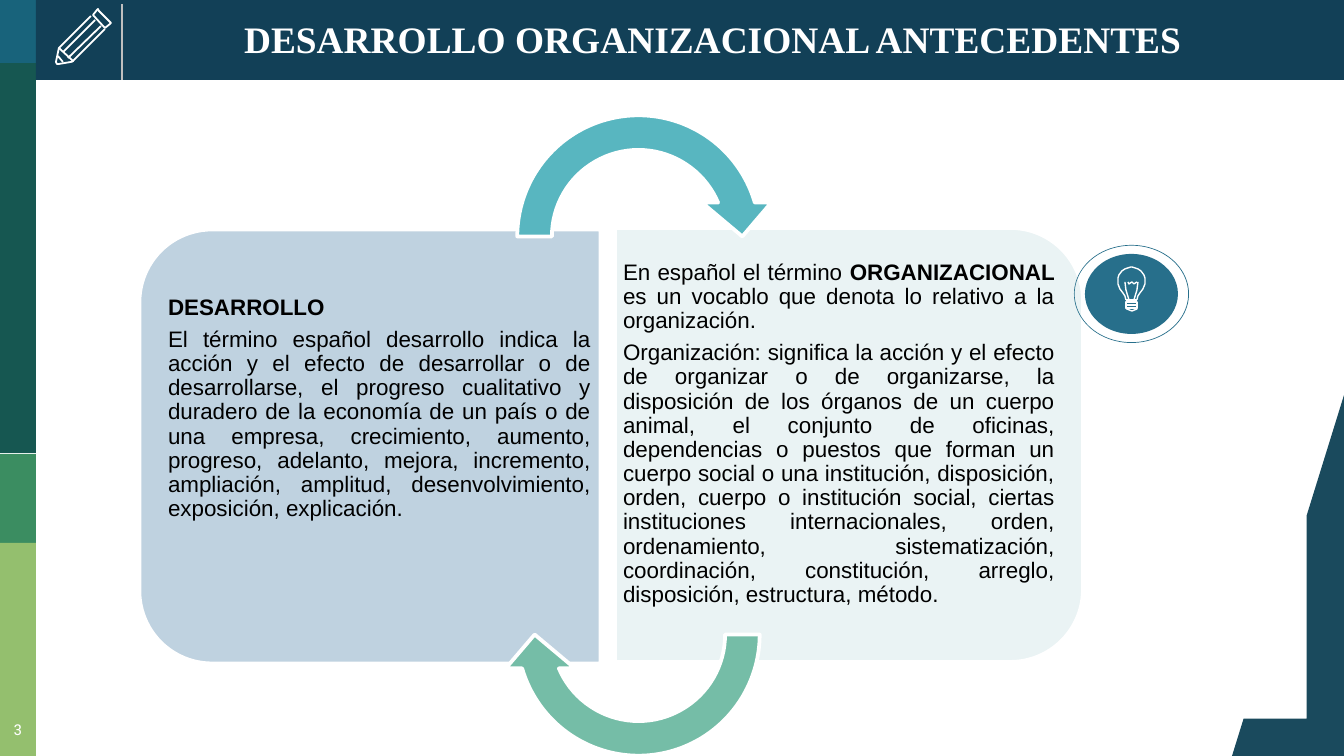
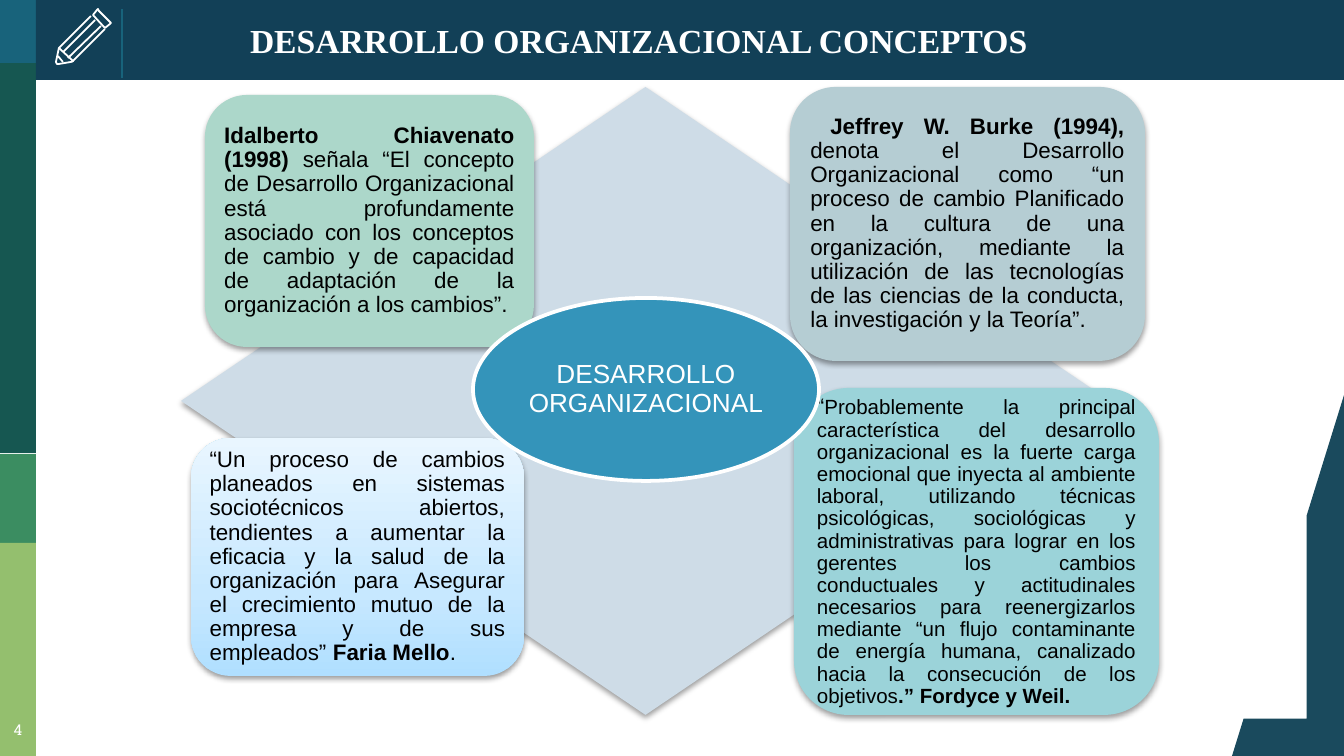
from dataclasses import dataclass

import pptx
import pptx.dml.color
import pptx.enum.shapes
import pptx.enum.text
import pptx.oxml
import pptx.oxml.ns
import pptx.util

PX = 914400 / 134.4
SHAPE = pptx.enum.shapes.MSO_SHAPE
ALIGN = pptx.enum.text.PP_ALIGN
ANCHOR = pptx.enum.text.MSO_ANCHOR
NS = 'xmlns:a="http://schemas.openxmlformats.org/drawingml/2006/main"'


@dataclass(frozen=True)
class Theme:
    white: str = "FFFFFF"
    black: str = "000000"
    header: str = "124057"
    corner: str = "1A4A5D"
    rule: str = "18637B"
    rule_light: str = "BFBFBF"
    badge: str = "276F8B"
    development: str = "BFD2E0"
    organization: str = "EAF3F4"
    arrow_top: str = "58B6C0"
    arrow_bottom: str = "75BDA7"
    diamond: str = "CEDCE7"
    hub: str = "3494BA"
    chiavenato: str = "ACD7CA"
    burke: str = "B5CDD3"
    fordyce: str = "9BD3D9"
    mello: tuple = ((0, "B0DFFF"), (35, "C7E8FF"), (100, "E9F6FF"))
    title_font: str = "Times New Roman"
    body_font: str = "Arial"
    number_font: str = "Roboto Slab"
    body: int = 12
    small: int = 11
    hub_size: int = 14
    number: int = 8


T = Theme()

PENCIL = [
    ([(110, 22), (99, 11), (98, 9), (97, 10), (93, 15), (105, 28), (110, 24), (111, 23)], True),
    ([(101, 26), (68, 58)], False),
    ([(91, 16), (59, 48), (56, 62), (57, 64), (59, 64), (71, 62), (73, 61), (105, 29)], False),
    ([(63, 52), (95, 20)], False),
    ([(63, 62), (58, 56)], False),
    ([(59, 48), (60, 49), (72, 60), (73, 62)], False),
]
GLASS = [(1137, 300), (1138, 296), (1140, 293), (1143, 289), (1145, 284), (1145, 278),
         (1144, 275), (1141, 271), (1138, 269), (1135, 268), (1132, 267)]
BULB = [
    ([(1137, 308), (1137, 305), (1126, 305), (1126, 308)], True),
    ([(1137, 305), (1137, 302), (1126, 302), (1126, 305)], True),
    ([(1126, 308), (1127, 309), (1132, 311), (1137, 309), (1137, 308)], True),
    ([(1129, 300), (1126, 290), (1125, 282)], False),
    (GLASS + [(2263 - x, y) for x, y in reversed(GLASS)], False),
    ([(1138, 282), (1137, 290), (1134, 300)], False),
    ([(1128, 282), (1129, 284), (1132, 282), (1134, 284), (1137, 282)], False),
    ([(1126, 300), (1137, 300)], False),
]


def px(n):
    return pptx.util.Emu(round(n * PX))


def rgb(color):
    return pptx.dml.color.RGBColor.from_string(color)


def place(sp, box):
    sp.left, sp.top, sp.width, sp.height = map(px, box)


def gradient(sp, stops):
    sp.fill.gradient()
    sp.fill.gradient_angle = 90
    gs_lst = sp.element.spPr.find(".//" + pptx.oxml.ns.qn("a:gsLst"))
    for gs in list(gs_lst):
        gs_lst.remove(gs)
    for pos, color in stops:
        gs_lst.append(pptx.oxml.parse_xml(
            f'<a:gs {NS} pos="{pos * 1000}"><a:srgbClr val="{color}"/></a:gs>'))


def add_shape(s, kind, box, fill, outline=None, rotation=0, adj=(), shadow=False):
    sp = s.shapes.add_shape(kind, *map(px, box))
    sp.rotation = rotation
    for i, value in enumerate(adj):
        sp.adjustments[i] = value
    if isinstance(fill, tuple):
        gradient(sp, fill)
    else:
        sp.fill.solid()
        sp.fill.fore_color.rgb = rgb(fill)
    if outline:
        sp.line.color.rgb = rgb(outline)
        sp.line.width = pptx.util.Pt(2)
    else:
        sp.line.fill.background()
    sp.shadow.inherit = False
    if shadow:
        effects = sp.element.spPr.find(pptx.oxml.ns.qn("a:effectLst"))
        effects.append(pptx.oxml.parse_xml(
            f'<a:outerShdw {NS} blurRad="39370" dist="20320" dir="5400000" rotWithShape="0">'
            f'<a:srgbClr val="{T.black}"><a:alpha val="38000"/></a:srgbClr></a:outerShdw>'))
    return sp


def add_rule(s, x, top, bottom, color):
    line = s.shapes.add_connector(
        pptx.enum.shapes.MSO_CONNECTOR.STRAIGHT, px(x), px(top), px(x), px(bottom))
    line.line.color.rgb = rgb(color)
    line.line.width = pptx.util.Pt(0.75)
    line.element.spPr.append(pptx.oxml.parse_xml(f"<a:effectLst {NS}/>"))


def add_icon(s, strokes, weight):
    group = s.shapes.add_group_shape()
    for points, closed in strokes:
        builder = group.shapes.build_freeform(*points[0], scale=PX)
        builder.add_line_segments(points[1:], close=closed)
        sp = builder.convert_to_shape()
        sp.fill.background()
        sp.line.color.rgb = rgb(T.white)
        sp.line.width = pptx.util.Pt(weight)
        sp.shadow.inherit = False


def set_frame(tf, margins, anchor):
    tf.word_wrap = True
    tf.auto_size = pptx.enum.text.MSO_AUTO_SIZE.NONE
    tf.vertical_anchor = anchor
    tf.margin_left, tf.margin_top, tf.margin_right, tf.margin_bottom = map(px, margins)


def set_font(font, name, size, color, bold=False):
    font.name = name
    font.size = pptx.util.Pt(size)
    font.color.rgb = rgb(color)
    font.bold = bold


def write(tf, paragraphs, size=T.body, color=T.black, align=ALIGN.JUSTIFY):
    for i, runs in enumerate(paragraphs):
        p = tf.add_paragraph() if i else tf.paragraphs[0]
        p.alignment = align
        p.line_spacing = 0.9
        p.space_after = pptx.util.Pt(4.2)
        all_bold = all(bold for _, bold in runs)
        set_font(p.font, T.body_font, size, color, all_bold)
        for text, bold in runs:
            r = p.add_run()
            r.text = text
            if bold and not all_bold:
                r.font.bold = True


def add_text(s, box, margins, paragraphs):
    tf = s.shapes.add_textbox(*map(px, box)).text_frame
    set_frame(tf, margins, ANCHOR.TOP)
    write(tf, paragraphs)


def add_card(s, box, fill, runs, size=T.body):
    sp = add_shape(s, SHAPE.ROUNDED_RECTANGLE, box, fill, shadow=True)
    set_frame(sp.text_frame, (7, 7, 7, 7), ANCHOR.MIDDLE)
    write(sp.text_frame, [runs], size)
    return sp.text_frame.paragraphs[0]


def decorate_layout(s, layout):
    bands = [((0, 0, 36, 78), T.rule), ((0, 63, 36, 390), "165751"),
             ((0, 454, 36, 89), "3B8D61"), ((0, 543, 36, 213), "94BF6E"),
             ((36, 0, 1308, 80), T.header)]
    for box, color in bands:
        add_shape(s, SHAPE.RECTANGLE, box, color)
    add_shape(s, SHAPE.HALF_FRAME, (1232, 395, 112, 361), T.corner, rotation=180)
    add_rule(s, 122, 9, 78, T.rule)
    for sp in list(s.shapes):
        if not sp.is_placeholder:
            layout.shapes.element.append(sp.element)


def add_heading(s, text, box, size, number):
    title = s.shapes.title
    place(title, box)
    set_frame(title.text_frame, (13, 7, 13, 7), ANCHOR.TOP)
    title.text_frame.text = text
    p = title.text_frame.paragraphs[0]
    p.alignment = ALIGN.LEFT
    set_font(p.font, T.title_font, size, T.white, True)
    tf = s.shapes.add_textbox(*map(px, (0, 708, 36, 47))).text_frame
    set_frame(tf, (0, 13, 0, 13), ANCHOR.TOP)
    tf.text = str(number)
    tf.paragraphs[0].alignment = ALIGN.CENTER
    set_font(tf.paragraphs[0].font, T.number_font, T.number, T.white)
    add_icon(s, PENCIL, 0.96)


def build_background(s):
    add_heading(s, "DESARROLLO ORGANIZACIONAL ANTECEDENTES", (231, 9, 972, 59), 20, 3)
    add_rule(s, 122, 4, 80, T.rule_light)
    corners = (0.167, 0)
    add_shape(s, SHAPE.ROUND_2_SAME_RECTANGLE, (153, 216, 434, 461), T.development,
              T.white, 270, corners)
    add_text(s, (161, 285, 439, 358), (7, 11, 9, 11), [
        [("DESARROLLO", True)],
        [("El término español desarrollo indica la acción y el efecto de desarrollar o de "
          "desarrollarse, el progreso cualitativo y duradero de la economía de un país o de una "
          "empresa, crecimiento, aumento, progreso, adelanto, mejora, incremento, ampliación, "
          "amplitud, desenvolvimiento, exposición, explicación.", False)]])
    add_shape(s, SHAPE.ROUND_2_SAME_RECTANGLE, (632, 211, 434, 468), T.organization,
              T.white, 90, corners)
    add_text(s, (614, 250, 448, 392), (9, 11, 7, 11), [
        [("En español el término ", False), ("ORGANIZACIONAL", True),
         (" es un vocablo que denota lo relativo a la organización.", False)],
        [("Organización: significa la acción y el efecto de organizar o de organizarse, la "
          "disposición de los órganos de un cuerpo animal, el conjunto de oficinas, dependencias "
          "o puestos que forman un cuerpo social o una institución, disposición, orden, cuerpo o "
          "institución social, ciertas instituciones internacionales, orden, ordenamiento, "
          "sistematización, coordinación, constitución, arreglo, disposición, estructura, "
          "método.", False)]])
    for top, color, rotation in ((98, T.arrow_top, 0), (496, T.arrow_bottom, 180)):
        add_shape(s, SHAPE.CIRCULAR_ARROW, (500, top, 277, 277), color, T.white, rotation,
                  (0.125, 11.423, 204.577, 108, 0.125))
    add_shape(s, SHAPE.OVAL, (1085, 254, 93, 80), T.badge)
    add_shape(s, SHAPE.DONUT, (1074, 245, 115, 98), T.badge, adj=(0.007,))
    add_icon(s, BULB, 0.75)


def build_concepts(s):
    add_heading(s, "DESARROLLO ORGANIZACIONAL CONCEPTOS", (237, 13, 817, 54), 18, 4)
    add_shape(s, SHAPE.DIAMOND, (181, 87, 929, 628), T.diamond, shadow=True)
    add_card(s, (205, 95, 329, 252), T.chiavenato, [
        ("Idalberto Chiavenato (1998) ", True),
        ("señala “El concepto de Desarrollo Organizacional está profundamente asociado con los "
         "conceptos de cambio y de capacidad de adaptación de la organización a los cambios”.",
         False)])
    burke = add_card(s, (790, 87, 355, 274), T.burke, [
        ("Jeffrey W. Burke (1994), ", True),
        ("denota el Desarrollo Organizacional como “un proceso de cambio Planificado en la "
         "cultura de una organización, mediante la utilización de las tecnologías de las "
         "ciencias de la conducta, la investigación y la Teoría”.", False)])
    burke._p.get_or_add_pPr().set("indent", str(px(20)))
    add_card(s, (191, 438, 333, 238), T.mello, [
        ("“Un proceso de cambios planeados en sistemas sociotécnicos abiertos, tendientes a "
         "aumentar la eficacia y la salud de la organización para Asegurar el crecimiento mutuo "
         "de la empresa y de sus empleados” ", False),
        ("Faria Mello", True), (".", False)])
    fordyce = add_card(s, (794, 388, 365, 327), T.fordyce, [
        ("“", False),
        ("Probablemente la principal característica del desarrollo organizacional es la fuerte "
         "carga emocional que inyecta al ambiente laboral, utilizando técnicas psicológicas, "
         "sociológicas y administrativas para lograr en los gerentes los cambios conductuales y "
         "actitudinales necesarios para reenergizarlos mediante “un flujo contaminante de "
         "energía humana, canalizado hacia la consecución de los objetivos", False),
        (".” Fordyce y Weil.", True)], T.small)
    fordyce.runs[0].font.size = pptx.util.Pt(T.body)
    hub = add_shape(s, SHAPE.OVAL, (473, 298, 346, 183), T.hub, T.white)
    set_frame(hub.text_frame, (1, 1, 1, 1), ANCHOR.MIDDLE)
    write(hub.text_frame, [[("DESARROLLO ORGANIZACIONAL", False)]], T.hub_size, T.white,
          ALIGN.CENTER)


def main():
    prs = pptx.Presentation()
    prs.slide_width, prs.slide_height = px(1344), px(756)
    layout = prs.slide_layouts[5]
    background, concepts = [prs.slides.add_slide(layout) for _ in range(2)]
    decorate_layout(background, layout)
    build_background(background)
    build_concepts(concepts)
    prs.save("out.pptx")


if __name__ == "__main__":
    main()
